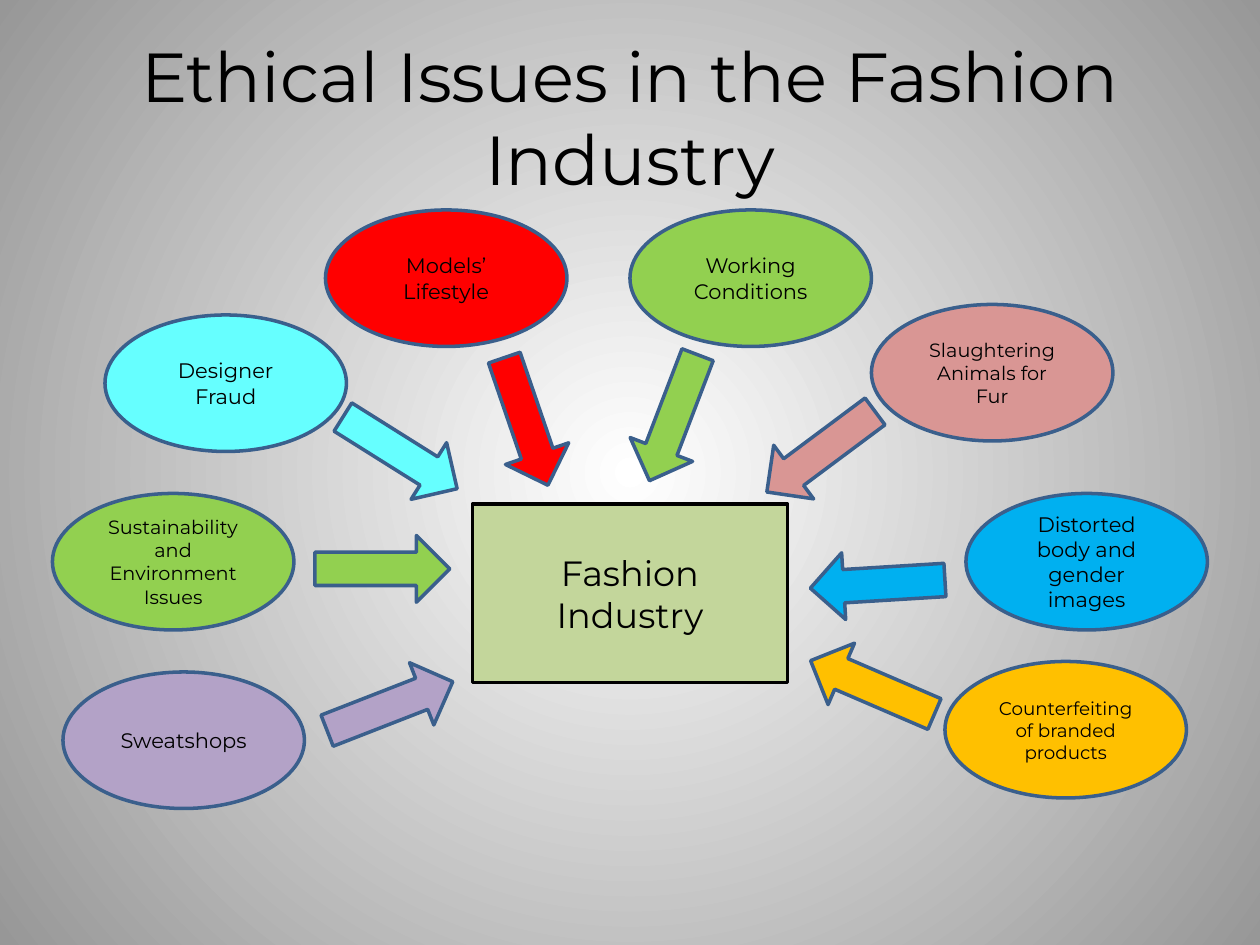
from dataclasses import dataclass

from lxml import etree
from pptx import Presentation
from pptx import util as u
from pptx.dml.color import RGBColor
from pptx.enum import shapes, text
from pptx.oxml import parse_xml
from pptx.oxml.ns import nsdecls, qn

UNIT = u.Inches(1) / 12  # one grid cell: 120 columns by 90 rows
OVAL_SIZE = (23, 13)
ARROW_SIZE = (12.84, 6.36)


@dataclass(frozen=True)
class Theme:
    font: str = "Montserrat"
    ink: str = "000000"
    outline: str = "3A5F8C"
    hub: str = "C3D69B"
    glow: str = "FFFFFF"
    edge: str = "979797"
    title_pt: float = 39.6
    hub_pt: float = 20
    issue_pt: float = 12
    line_pt: float = 2


THEME = Theme()


@dataclass(frozen=True)
class Issue:
    """An oval (left column, top row) and its arrow (centre, angle)."""
    label: str
    color: str
    col: float
    row: float
    arrow_center: tuple[float, float]
    angle: float
    size: float = THEME.issue_pt


ISSUES = [
    Issue("Designer Fraud", "66FFFF", 10, 30, (38.1, 43.14), 32.1),
    Issue("Models’ Lifestyle", "FF0000", 31, 20, (50.1, 40.14), 71.1),
    Issue("Sustainability and Environment Issues", "92D050", 5, 47,
          (36.42, 54.18), 0, 11),
    Issue("Sweatshops", "B3A2C7", 6, 64, (37.14, 67.26), 338.7),
    Issue("Working Conditions", "92D050", 60, 20, (64.14, 39.78), 110.9),
    Issue("Slaughtering Animals for Fur", "D99694", 83, 29,
          (78.18, 43.02), 143.3, 11),
    Issue("Distorted body and gender images", "00B0F0", 92, 47,
          (83.58, 55.62), 176.5),
    Issue("Counterfeiting of branded products", "FFC000", 90, 63,
          (83.1, 65.46), 203.3, 10.5),
]


def grid(*cells: float) -> list[int]:
    return [u.Emu(round(c * UNIT)) for c in cells]


def set_background(s) -> None:
    """Radial gradient, light in the middle."""
    fill = s.background.fill
    fill.solid()
    bg_pr = s._element.cSld.find(qn("p:bg")).find(qn("p:bgPr"))
    stops = "".join(
        f'<a:gs pos="{pos}"><a:srgbClr val="{color}"/></a:gs>'
        for pos, color in ((0, THEME.glow), (100000, THEME.edge)))
    grad = parse_xml(
        f'<a:gradFill {nsdecls("a")} rotWithShape="1"><a:gsLst>{stops}</a:gsLst>'
        '<a:path path="circle"><a:fillToRect l="50000" t="50000" r="50000" '
        'b="50000"/></a:path></a:gradFill>')
    bg_pr.replace(bg_pr.find(qn("a:solidFill")), grad)
    if bg_pr.find(qn("a:effectLst")) is None:
        etree.SubElement(bg_pr, qn("a:effectLst"))


def write(sp, words: str, *, size: float) -> None:
    tf = sp.text_frame
    tf.word_wrap = True
    tf.vertical_anchor = text.MSO_ANCHOR.MIDDLE
    p = tf.paragraphs[0]
    p.alignment = text.PP_ALIGN.CENTER
    r = p.add_run()
    r.text = words
    r.font.name = THEME.font
    r.font.size = u.Pt(size)
    r.font.color.rgb = RGBColor.from_string(THEME.ink)


def add_figure(s, kind, box: tuple, color: str, line: str = THEME.outline):
    sp = s.shapes.add_shape(kind, *grid(*box))
    sp.shadow.inherit = False
    sp.fill.solid()
    sp.fill.fore_color.rgb = RGBColor.from_string(color)
    sp.line.color.rgb = RGBColor.from_string(line)
    sp.line.width = u.Pt(THEME.line_pt)
    return sp


def add_oval(s, issue: Issue) -> None:
    box = (issue.col, issue.row, *OVAL_SIZE)
    sp = add_figure(s, shapes.MSO_SHAPE.OVAL, box, issue.color)
    write(sp, issue.label, size=issue.size)


def add_arrow(s, issue: Issue) -> None:
    (x, y), (w, h) = issue.arrow_center, ARROW_SIZE
    box = (x - w / 2, y - h / 2, w, h)
    sp = add_figure(s, shapes.MSO_SHAPE.RIGHT_ARROW, box, issue.color)
    sp.rotation = issue.angle


def main() -> None:
    prs = Presentation()
    prs.slide_width, prs.slide_height = grid(120, 90)
    s = prs.slides.add_slide(prs.slide_layouts[6])
    set_background(s)
    title = s.shapes.add_textbox(*grid(6, 3.6, 108, 15))
    write(title, "Ethical Issues in the Fashion Industry", size=THEME.title_pt)
    for issue in ISSUES:
        add_oval(s, issue)
    for issue in reversed(ISSUES):
        add_arrow(s, issue)
    hub = add_figure(s, shapes.MSO_SHAPE.RECTANGLE, (45, 48, 30, 17),
                     THEME.hub, THEME.ink)
    write(hub, "Fashion Industry", size=THEME.hub_pt)
    prs.save("out.pptx")


if __name__ == "__main__":
    main()
